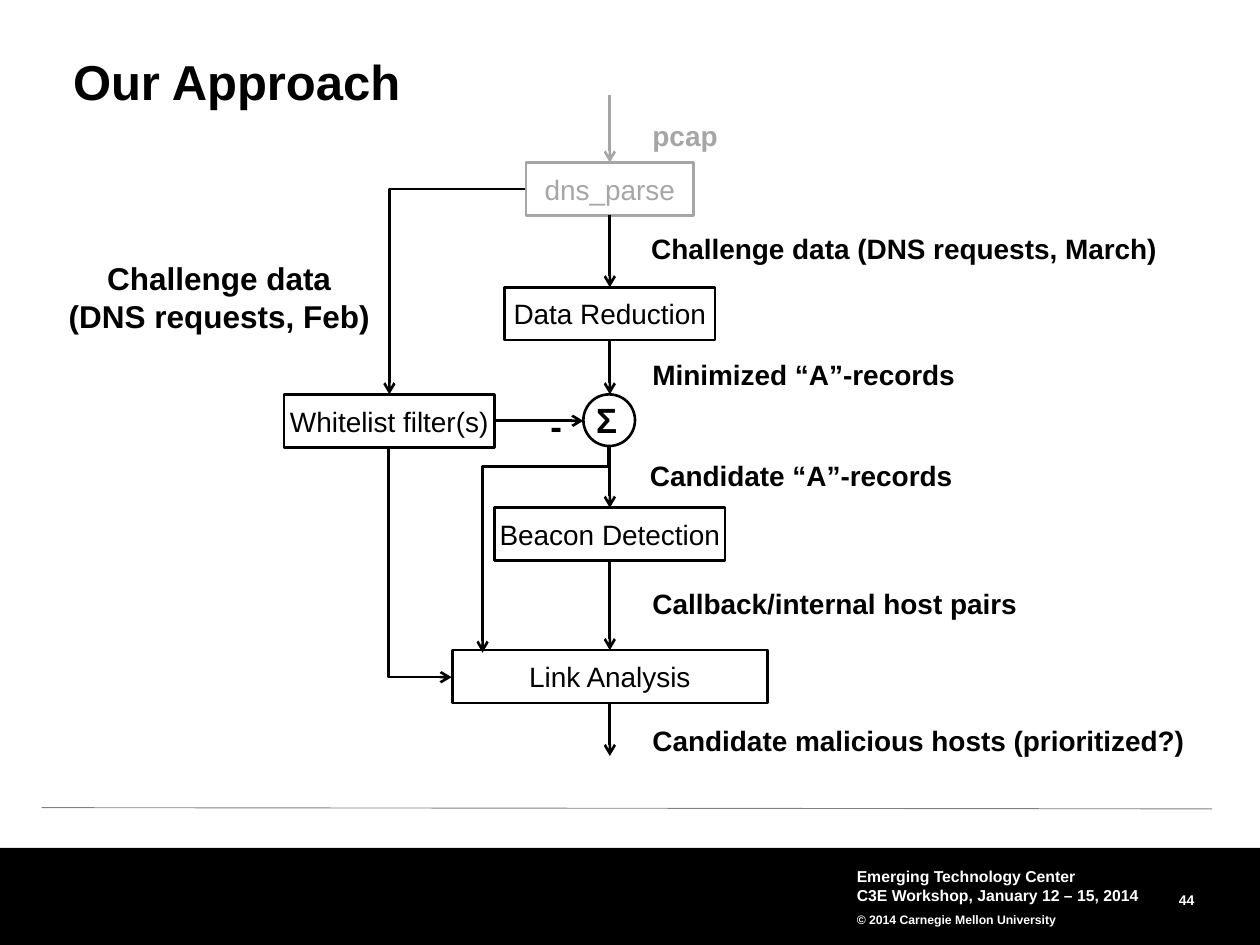
from dataclasses import dataclass

from lxml import etree
from pptx import Presentation
from pptx.dml.color import RGBColor
from pptx.enum.shapes import MSO_CONNECTOR as Connector, MSO_SHAPE as Shape
from pptx.enum.text import MSO_ANCHOR as Anchor, PP_ALIGN as Align
from pptx.oxml.ns import qn
from pptx.util import Inches, Pt


@dataclass(frozen=True)
class Theme:
    font: str = "Arial"
    black: RGBColor = RGBColor(0, 0, 0)
    white: RGBColor = RGBColor(255, 255, 255)
    muted: RGBColor = RGBColor(0xA6, 0xA6, 0xA6)
    rule: RGBColor = RGBColor(0x80, 0x80, 0x80)
    title: int = 28
    symbol: int = 20
    note: int = 18
    body: int = 16
    footer: int = 9
    number: int = 8
    copyright: int = 7
    stroke: float = 1.5


THEME = Theme()
AXIS = 4.84  # centre line of the main flow
BRANCH = 3.09  # centre line of the whitelist branch
BOX_HEIGHT = 0.42


def add_run(paragraph, text, size, color=THEME.black, bold=False):
    run = paragraph.add_run()
    run.text = text
    font = run.font
    font.name, font.size, font.bold = THEME.font, Pt(size), bold
    font.color.rgb = color


def set_frame(frame, inset=0.0, wrap=True, anchor=Anchor.MIDDLE):
    frame.margin_left = frame.margin_right = Inches(inset)
    frame.margin_top = frame.margin_bottom = Inches(inset)
    frame.word_wrap = wrap
    frame.vertical_anchor = anchor


def add_text(slide, place, lines, align=Align.LEFT, color=THEME.black, inset=None, wrap=False):
    """Add bold text; lines holds (text, size) pairs, one for each paragraph."""
    frame = slide.shapes.add_textbox(*map(Inches, place)).text_frame
    frame.word_wrap = wrap
    if inset is not None:
        set_frame(frame, inset, wrap)
    for index, (text, size) in enumerate(lines):
        paragraph = frame.paragraphs[0] if index == 0 else frame.add_paragraph()
        paragraph.alignment = align
        add_run(paragraph, text, size, color, bold=True)
    return frame


def add_node(slide, kind, place, text="", color=THEME.black):
    shape = slide.shapes.add_shape(kind, *map(Inches, place))
    shape.shadow.inherit = False
    shape.fill.background()
    shape.line.color.rgb = color
    shape.line.width = Pt(THEME.stroke)
    if text:
        set_frame(shape.text_frame, wrap=False)
        paragraph = shape.text_frame.paragraphs[0]
        paragraph.alignment = Align.CENTER
        add_run(paragraph, text, THEME.body, color)


def add_line(slide, start, end, color=THEME.black, width=THEME.stroke, arrow=True,
             kind=Connector.STRAIGHT):
    line = slide.shapes.add_connector(kind, *map(Inches, (*start, *end)))
    line.line.color.rgb = color
    line.line.width = Pt(width)
    if arrow:
        etree.SubElement(line.line._get_or_add_ln(), qn("a:tailEnd"), type="arrow")
    etree.SubElement(line._element.spPr, qn("a:effectLst"))
    return line


def add_elbow(slide, place, preset, rotation, flip=None, bend=None):
    """Add a bent arrow; place is its frame before rotation."""
    left, top, width, height = place
    line = add_line(slide, (left, top), (left + width, top + height), kind=Connector.ELBOW)
    properties = line._element.spPr
    transform = properties.find(qn("a:xfrm"))
    transform.set("rot", str(rotation * 60000))
    if flip:
        transform.set(flip, "1")
    geometry = properties.find(qn("a:prstGeom"))
    geometry.set("prst", preset)
    if bend is not None:
        guides = geometry.find(qn("a:avLst"))
        etree.SubElement(guides, qn("a:gd"), name="adj1", fmla=f"val {round(bend * 100000)}")


def add_title(slide, text):
    title = slide.shapes.title
    title.left, title.top, title.width, title.height = map(Inches, (0.58, 0.46, 8.92, 0.42))
    set_frame(title.text_frame, anchor=Anchor.TOP)
    paragraph = title.text_frame.paragraphs[0]
    paragraph.alignment = Align.LEFT
    paragraph.line_spacing = 0.9
    add_run(paragraph, text, THEME.title, bold=True)


def add_footer(slide):
    add_line(slide, (0.33, 6.41), (9.62, 6.42), THEME.rule, 0.5, arrow=False)
    band = slide.shapes.add_shape(Shape.RECTANGLE, *map(Inches, (0, 6.73, 10, 0.77)))
    band.shadow.inherit = False
    band.fill.solid()
    band.fill.fore_color.rgb = THEME.black
    band.line.fill.background()
    number = add_text(slide, (8.56, 7.03, 0.92, 0.18), [("44", THEME.number)],
                      Align.RIGHT, THEME.white, inset=0, wrap=True)
    number.paragraphs[0].line_spacing = Pt(13)
    credits = add_text(slide, (6.75, 6.83, 2.5, 0.58), [
        ("Emerging Technology Center", THEME.footer),
        ("C3E Workshop, January 12 – 15, 2014", THEME.footer),
        ("© 2014 Carnegie Mellon University", THEME.copyright),
    ], color=THEME.white, inset=0.05, wrap=True)
    credits.paragraphs[-1].line_spacing = 1.5


def add_nodes(slide):
    for text, center, top, width, color in [
        ("dns_parse", AXIS, 1.29, 1.33, THEME.muted),
        ("Data Reduction", AXIS, 2.28, 1.67, THEME.black),
        ("Whitelist filter(s)", BRANCH, 3.13, 1.67, THEME.black),
        ("Beacon Detection", AXIS, 4.03, 1.83, THEME.black),
        ("Link Analysis", AXIS, 5.16, 2.5, THEME.black),
    ]:
        place = (center - width / 2, top, width, BOX_HEIGHT)
        add_node(slide, Shape.RECTANGLE, place, text, color)
    # Subtraction of the whitelist
    add_node(slide, Shape.OVAL, (4.63, 3.13, 0.41, 0.41))
    add_text(slide, (4.63, 3.11, 0.37, 0.44), [("Σ", THEME.symbol)], Align.CENTER)
    add_text(slide, (4.27, 3.16, 0.29, 0.44), [("-", THEME.symbol)], Align.CENTER)


def add_arrows(slide):
    # Main flow, top to bottom
    add_line(slide, (AXIS, 0.75), (AXIS, 1.29), THEME.muted)
    for start, end in [(1.71, 2.28), (2.7, 3.13), (3.54, 4.03), (4.44, 5.16), (5.58, 6)]:
        add_line(slide, (AXIS, start), (AXIS, end))
    # Whitelist branch and the bypass of beacon detection
    add_line(slide, (3.92, 3.34), (4.63, 3.34))
    add_elbow(slide, (3.09, 1.5, 1.08, 1.63), "bentConnector2", 180, "flipV")
    add_elbow(slide, (2.42, 4.21, 1.83, 0.5), "bentConnector2", 270, "flipH")
    add_elbow(slide, (3.51, 3.86, 1.64, 1), "bentConnector3", 90, bend=0.1)


def add_labels(slide):
    for text, left, top, width, color in [
        ("pcap", 5.08, 0.89, 0.72, THEME.muted),
        ("Challenge data (DNS requests, March)", 5.07, 1.79, 4.27, THEME.black),
        ("Minimized “A”-records", 5.08, 2.79, 2.63, THEME.black),
        ("Candidate “A”-records", 5.06, 3.59, 2.63, THEME.black),
        ("Callback/internal host pairs", 5.08, 4.61, 3.13, THEME.black),
        ("Candidate malicious hosts (prioritized?)", 5.08, 5.69, 4.48, THEME.black),
    ]:
        add_text(slide, (left, top, width, 0.37), [(text, THEME.body)], color=color)
    add_text(slide, (0.4, 2.01, 2.68, 0.71), [
        ("Challenge data", THEME.note), ("(DNS requests, Feb)", THEME.note),
    ], Align.CENTER)


def main():
    presentation = Presentation()
    presentation.slide_width, presentation.slide_height = Inches(10), Inches(7.5)
    slide = presentation.slides.add_slide(presentation.slide_layouts[5])
    add_footer(slide)
    add_title(slide, "Our Approach")
    add_nodes(slide)
    add_arrows(slide)
    add_labels(slide)
    presentation.save("out.pptx")


if __name__ == "__main__":
    main()
